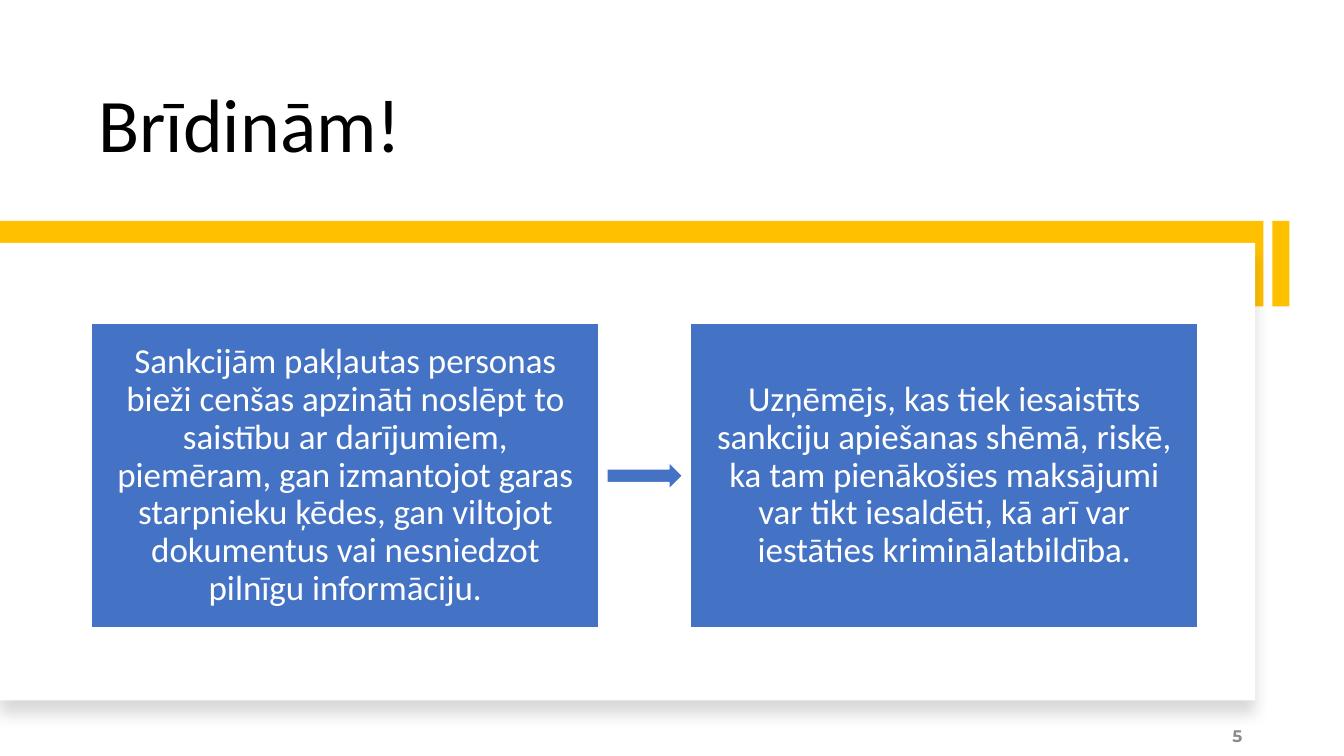
from lxml.etree import SubElement
from pptx import Presentation
from pptx.dml.color import RGBColor
from pptx.enum.shapes import MSO_SHAPE
from pptx.enum.text import MSO_ANCHOR, PP_ALIGN
from pptx.oxml.ns import qn
from pptx.util import Inches, Pt

TITLE = "Brīdinām!"
PAGE_NUMBER = "5"
STEPS = [
    "Sankcijām pakļautas personas bieži cenšas apzināti noslēpt to saistību ar "
    "darījumiem, piemēram, gan izmantojot garas starpnieku ķēdes, gan viltojot "
    "dokumentus vai nesniedzot pilnīgu informāciju.",
    "Uzņēmējs, kas tiek iesaistīts sankciju apiešanas shēmā, riskē, ka tam "
    "pienākošies maksājumi var tikt iesaldēti, kā arī var iestāties "
    "kriminālatbildība.",
]
WHITE, BLACK, GREY, GOLD, BLUE = "FFFFFF", "000000", "8C8C8C", "FFC000", "4472C4"

SLIDE_WIDTH, SLIDE_HEIGHT = 13.33, 7.5
BAND_TOP, BAND_HEIGHT, BAND_WIDTH = 2.19, 0.85, 12.53
TAB_LEFT, TAB_WIDTH = 12.62, 0.17
PANEL = (0, 2.41, 12.45, 4.54)
STEP_LEFT, STEP_TOP, STEP_WIDTH, STEP_HEIGHT = 0.91, 3.21, 5.03, 3.02
STEP_GAP = 0.91
ARROW_WIDTH, ARROW_HEIGHT = 0.75, 0.27


def color(hex_text):
    return RGBColor.from_string(hex_text)


def add_block(page, place, fill, kind=MSO_SHAPE.RECTANGLE, outline=None):
    block = page.shapes.add_shape(kind, *map(Inches, place))
    block.shadow.inherit = False
    block.fill.solid()
    block.fill.fore_color.rgb = color(fill)
    if outline:
        block.line.color.rgb = color(outline)
        block.line.width = Pt(1)
    else:
        block.line.fill.background()
    return block


def write(shape, text, font, paragraph, anchor, inset=None):
    frame = shape.text_frame
    frame.word_wrap = True
    frame.vertical_anchor = anchor
    if inset is not None:
        for side in ("left", "top", "right", "bottom"):
            setattr(frame, f"margin_{side}", Inches(inset))
    para = frame.paragraphs[0]
    for name, value in paragraph.items():
        setattr(para, name, value)
    span = para.add_run()
    span.text = text
    hex_text, *_ = font["color"],
    span.font.color.rgb = color(hex_text)
    for name in ("name", "size", "bold"):
        setattr(span.font, name, font.get(name))


def add_soft_shadow(shape):
    """Cast a faint blurred shadow straight down."""
    effects = shape._element.spPr.find(qn("a:effectLst"))
    shadow = SubElement(effects, qn("a:outerShdw"), blurRad=str(Pt(11)),
                        dist=str(Pt(10)), dir="5400000", algn="t", rotWithShape="0")
    tint = SubElement(shadow, qn("a:srgbClr"), val=BLACK)
    SubElement(tint, qn("a:alpha"), val="15000")


def add_steps(page):
    pitch = STEP_WIDTH + STEP_GAP
    for index, text in enumerate(STEPS):
        left = STEP_LEFT + index * pitch
        if index:
            arrow_left = left - (STEP_GAP + ARROW_WIDTH) / 2
            arrow_top = STEP_TOP + (STEP_HEIGHT - ARROW_HEIGHT) / 2
            add_block(page, (arrow_left, arrow_top, ARROW_WIDTH, ARROW_HEIGHT),
                      BLUE, MSO_SHAPE.RIGHT_ARROW, WHITE)
        step = add_block(page, (left, STEP_TOP, STEP_WIDTH, STEP_HEIGHT),
                         BLUE, outline=WHITE)
        write(step, text, {"name": "Calibri", "size": Pt(25), "color": WHITE},
              {"alignment": PP_ALIGN.CENTER, "line_spacing": 0.9},
              MSO_ANCHOR.MIDDLE, inset=0.17)


def main():
    deck = Presentation()
    deck.slide_width, deck.slide_height = Inches(SLIDE_WIDTH), Inches(SLIDE_HEIGHT)
    page = deck.slides.add_slide(deck.slide_layouts[6])

    title = page.shapes.add_textbox(*map(Inches, (0.88, 0.42, 10.1, 1.3)))
    write(title, TITLE, {"name": "Calibri", "size": Pt(54), "color": BLACK},
          {"line_spacing": 0.9}, MSO_ANCHOR.BOTTOM)

    for left, width in ((TAB_LEFT, TAB_WIDTH), (0, BAND_WIDTH)):
        add_block(page, (left, BAND_TOP, width, BAND_HEIGHT), GOLD)
    add_soft_shadow(add_block(page, PANEL, WHITE))

    number = page.shapes.add_textbox(*map(Inches, (9.42, 7.1, 3, 0.4)))
    write(number, PAGE_NUMBER,
          {"name": "Montserrat", "size": Pt(12), "color": GREY, "bold": True},
          {"alignment": PP_ALIGN.RIGHT, "space_after": Pt(6)}, MSO_ANCHOR.MIDDLE)

    add_steps(page)
    deck.save("out.pptx")


if __name__ == "__main__":
    main()
